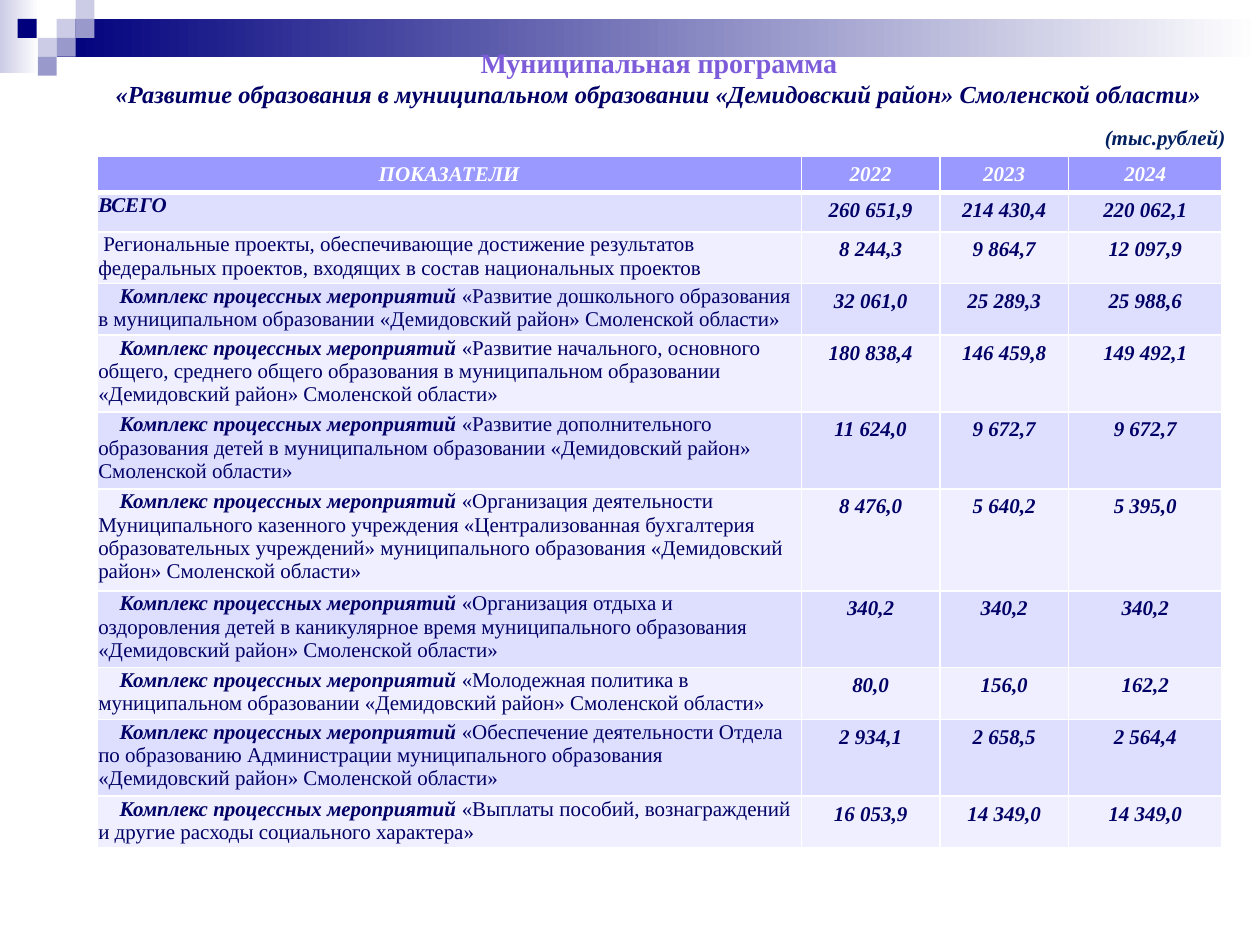
from dataclasses import dataclass

from lxml.etree import SubElement
from pptx import Presentation
from pptx.dml.color import RGBColor
from pptx.enum.shapes import MSO_SHAPE as Shape
from pptx.enum.text import MSO_AUTO_SIZE as AutoSize, PP_ALIGN as Align
from pptx.oxml.ns import qn
from pptx.util import Inches, Pt


@dataclass(frozen=True)
class Theme:
    font: str = "Times New Roman"
    white: str = "FFFFFF"
    navy: str = "00007D"
    violet: str = "9999CC"
    lilac: str = "CCCCE6"
    heading: str = "7D5CDA"
    ink: str = "000066"
    unit: str = "002060"
    header: str = "9999FF"
    bands: tuple = ("DEDEFF", "EFEFFF")
    heading_size: int = 16
    program_size: int = 14
    body_size: int = 12


THEME = Theme()

# Corner squares: left, top, colour
SQUARE = 0.15
SQUARES = [
    (0.45, 0.15, THEME.lilac), (0.6, 0, THEME.lilac), (0.6, 0.15, THEME.violet),
    (0.3, 0.3, THEME.lilac), (0.14, 0.15, THEME.navy), (0.45, 0.3, THEME.violet),
    (0.3, 0.45, THEME.violet),
]

COLUMN_WIDTHS = [5.59, 1.1, 1.02, 1.22]
LINE_HEIGHT = 0.2
HEADER = ["ПОКАЗАТЕЛИ", "2022", "2023", "2024"]
MEASURES = "Комплекс процессных мероприятий "
DISTRICT = "«Демидовский район» Смоленской области»"

# Bold lead, plain name, lines of text, first-line indent, yearly sums
INDICATORS = [
    ("ВСЕГО", "", 1.5, 0, ["260 651,9", "214 430,4", "220 062,1"]),
    ("", "Региональные проекты, обеспечивающие достижение результатов федеральных "
     "проектов, входящих в состав национальных проектов", 2, 0.04,
     ["8 244,3", "9 864,7", "12 097,9"]),
    (MEASURES, "«Развитие дошкольного образования в муниципальном образовании " + DISTRICT,
     2, 0.17, ["32 061,0", "25 289,3", "25 988,6"]),
    (MEASURES, "«Развитие начального, основного общего, среднего общего образования "
     "в муниципальном образовании " + DISTRICT,
     3, 0.17, ["180 838,4", "146 459,8", "149 492,1"]),
    (MEASURES, "«Развитие дополнительного образования детей в муниципальном образовании "
     + DISTRICT, 3, 0.17, ["11 624,0", "9 672,7", "9 672,7"]),
    (MEASURES, "«Организация деятельности Муниципального казенного учреждения "
     "«Централизованная бухгалтерия образовательных учреждений» муниципального "
     "образования " + DISTRICT, 4, 0.17, ["8 476,0", "5 640,2", "5 395,0"]),
    (MEASURES, "«Организация отдыха и оздоровления детей в каникулярное время "
     "муниципального образования " + DISTRICT, 3, 0.17, ["340,2", "340,2", "340,2"]),
    (MEASURES, "«Молодежная политика в муниципальном образовании " + DISTRICT,
     2, 0.17, ["80,0", "156,0", "162,2"]),
    (MEASURES, "«Обеспечение деятельности Отдела по образованию Администрации "
     "муниципального образования " + DISTRICT,
     3, 0.17, ["2 934,1", "2 658,5", "2 564,4"]),
    (MEASURES, "«Выплаты пособий, вознаграждений и другие расходы социального характера»",
     2, 0.17, ["16 053,9", "14 349,0", "14 349,0"]),
]


def rgb(colour):
    return RGBColor.from_string(colour)


def style_font(font, size, colour, bold=True, italic=True):
    font.name = THEME.font
    font.size = Pt(size)
    font.bold = bold
    font.italic = italic
    font.color.rgb = rgb(colour)


def add_block(slide, left, top, width, height, start, end=None):
    """Draw a borderless rectangle, shaded from start to end if end is given."""
    block = slide.shapes.add_shape(
        Shape.RECTANGLE, Inches(left), Inches(top), Inches(width), Inches(height))
    block.shadow.inherit = False
    block.line.fill.background()
    if end is None:
        block.fill.solid()
        block.fill.fore_color.rgb = rgb(start)
        return
    block.fill.gradient()
    block.fill.gradient_angle = 0
    for stop, colour in zip(block.fill.gradient_stops, (start, end)):
        stop.color.rgb = rgb(colour)


def add_label(slide, left, top, width, height, lines, align, wrap):
    """Add a text box; each line is text, size, colour, italic."""
    frame = slide.shapes.add_textbox(
        Inches(left), Inches(top), Inches(width), Inches(height)).text_frame
    frame.word_wrap = wrap
    frame.auto_size = AutoSize.SHAPE_TO_FIT_TEXT
    frame.text = "\n".join(line[0] for line in lines)
    for paragraph, (_, size, colour, italic) in zip(frame.paragraphs, lines):
        paragraph.alignment = align
        style_font(paragraph.runs[0].font, size, colour, italic=italic)


def paint_cell(cell, colour, top=1, bottom=1):
    """Set white borders (points) and the fill of a cell."""
    properties = cell._tc.get_or_add_tcPr()
    for side, points in (("lnL", 1), ("lnR", 1), ("lnT", top), ("lnB", bottom)):
        border = SubElement(properties, qn(f"a:{side}"), w=str(Pt(points)))
        fill = SubElement(border, qn("a:solidFill"))
        SubElement(fill, qn("a:srgbClr"), val=THEME.white)
    cell.fill.solid()
    cell.fill.fore_color.rgb = rgb(colour)


def fill_centred(cell, text, colour):
    paragraph = cell.text_frame.paragraphs[0]
    paragraph.text = text
    paragraph.alignment = Align.CENTER
    style_font(paragraph.runs[0].font, THEME.body_size, colour)


def fill_indicator(cell, lead, name, indent):
    cell.margin_left = cell.margin_right = cell.margin_top = Inches(0.01)
    cell.margin_bottom = 0
    paragraph = cell.text_frame.paragraphs[0]
    paragraph._p.get_or_add_pPr().set("indent", str(Inches(indent)))
    for text, strong in ((lead, True), (name, False)):
        if text:
            run = paragraph.add_run()
            run.text = text
            style_font(run.font, THEME.body_size, THEME.ink, strong, strong)


def add_budget_table(slide):
    table = slide.shapes.add_table(
        len(INDICATORS) + 1, len(HEADER), Inches(0.77), Inches(1.24),
        Inches(sum(COLUMN_WIDTHS)), Inches(5.49)).table
    for column, width in zip(table.columns, COLUMN_WIDTHS):
        column.width = Inches(width)

    # Header row
    table.rows[0].height = Inches(0.29)
    for cell, title in zip(table.rows[0].cells, HEADER):
        paint_cell(cell, THEME.header, bottom=3)
        fill_centred(cell, title, THEME.white)

    # Indicator rows in alternating bands
    for index, (lead, name, lines, indent, sums) in enumerate(INDICATORS):
        row = table.rows[index + 1]
        row.height = Inches(LINE_HEIGHT * lines + 0.01)
        cells = list(row.cells)
        for cell in cells:
            paint_cell(cell, THEME.bands[index % 2], top=1 if index else 3)
        fill_indicator(cells[0], lead, name, indent)
        for cell, amount in zip(cells[1:], sums):
            fill_centred(cell, amount, THEME.ink)


def main():
    deck = Presentation()
    deck.slide_width, deck.slide_height = Inches(10), Inches(7.5)
    slide = deck.slides.add_slide(deck.slide_layouts[6])

    # Top band and corner squares
    add_block(slide, 0, 0, 0.31, 0.58, THEME.lilac, THEME.white)
    add_block(slide, 0.45, 0.15, 9.55, 0.3, THEME.navy, THEME.white)
    for left, top, colour in SQUARES:
        add_block(slide, left, top, SQUARE, SQUARE, colour)

    # Budget table
    add_budget_table(slide)

    # Title and unit
    add_label(slide, 0.7, 0.31, 9.06, 0.61, [
        ("Муниципальная программа", THEME.heading_size, THEME.heading, False),
        ("«Развитие образования в муниципальном образовании " + DISTRICT,
         THEME.program_size, THEME.ink, True),
    ], Align.CENTER, True)
    add_label(slide, 8.67, 0.94, 1.17, 0.3, [
        ("(тыс.рублей)", THEME.body_size, THEME.unit, True),
    ], Align.LEFT, False)

    deck.save("out.pptx")


if __name__ == "__main__":
    main()
